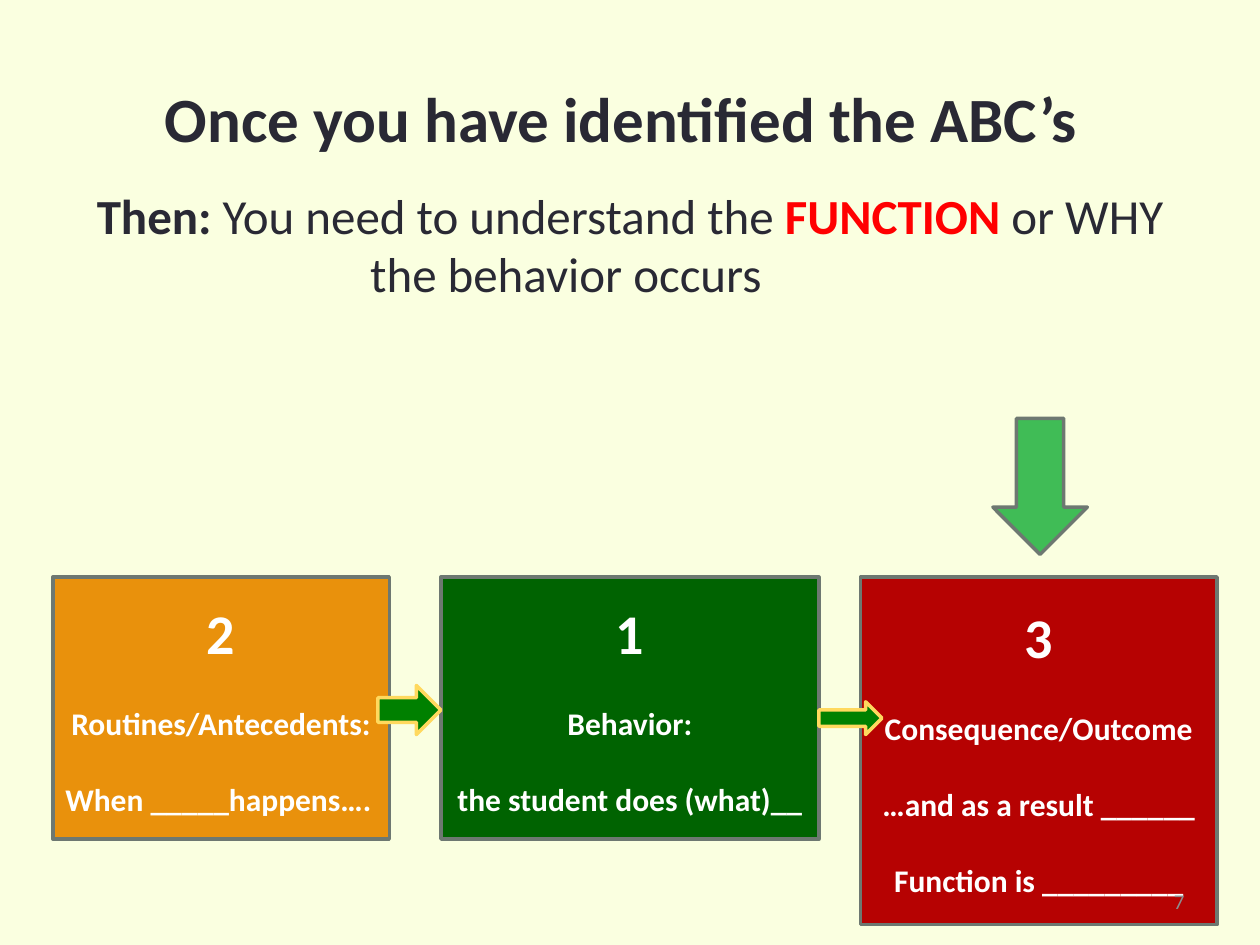
from dataclasses import dataclass

from pptx import Presentation
from pptx.dml.color import RGBColor
from pptx.enum.shapes import MSO_SHAPE
from pptx.enum.text import MSO_ANCHOR, PP_ALIGN
from pptx.util import Inches, Pt


@dataclass(frozen=True)
class Theme:
    """Colours, font and type sizes of the slide."""
    font: str = "Calibri"
    background: str = "FAFFE0"
    ink: str = "292934"
    emphasis: str = "FF0000"
    white: str = "FFFFFF"
    muted: str = "8D8D8F"
    outline: str = "6D7871"
    antecedent: str = "E9910C"
    behavior: str = "006301"
    consequence: str = "B60202"
    step_arrow: str = "008000"
    step_outline: str = "FFD95E"
    pointer: str = "40BC56"
    title_size: int = 36
    lead_size: int = 28
    number_size: int = 32
    label_size: int = 18
    page_size: int = 12


THEME = Theme()


def color(value):
    """Turn a hexadecimal string into a colour."""
    return RGBColor.from_string(value)


def set_font(font, size, ink, bold=None):
    """Set the theme font with a size, colour and weight."""
    font.name = THEME.font
    font.size = Pt(size)
    font.color.rgb = color(ink)
    font.bold = bold


def place(shape, left, top, width, height):
    """Move and size a shape in inches."""
    shape.left, shape.top = Inches(left), Inches(top)
    shape.width, shape.height = Inches(width), Inches(height)


def add_title(slide, text):
    """Fill and format the title placeholder."""
    title = slide.shapes.title
    place(title, 0.43, 0.54, 9, 0.78)
    title.text_frame.text = text
    title.text_frame.vertical_anchor = MSO_ANCHOR.MIDDLE
    paragraph = title.text_frame.paragraphs[0]
    paragraph.alignment = PP_ALIGN.CENTER
    set_font(paragraph.font, THEME.title_size, THEME.ink, True)


def add_text_box(slide, left, top, width, height):
    """Add a wrapping text box and return its text frame."""
    box = slide.shapes.add_textbox(*map(Inches, (left, top, width, height)))
    box.text_frame.word_wrap = True
    return box.text_frame


def add_lead(slide, pieces):
    """Add the lead sentence with an indented second line."""
    paragraph = add_text_box(slide, 0.5, 1.42, 9, 1.1).paragraphs[0]
    properties = paragraph._p.get_or_add_pPr()
    properties.set("marL", str(Inches(2.34)))
    properties.set("indent", str(Inches(-2.17)))
    for text, ink, bold in pieces:
        run = paragraph.add_run()
        run.text = text
        set_font(run.font, THEME.lead_size, ink, bold)


def add_figure(slide, kind, position, fill, outline):
    """Add a filled and outlined preset shape."""
    shape = slide.shapes.add_shape(kind, *map(Inches, position))
    shape.shadow.inherit = False
    shape.fill.solid()
    shape.fill.fore_color.rgb = color(fill)
    shape.line.color.rgb = color(outline)
    shape.line.width = Pt(2)
    return shape


def add_step(slide, position, fill, number, labels):
    """Add a step box with a large number above its labels."""
    box = add_figure(slide, MSO_SHAPE.RECTANGLE, position, fill, THEME.outline)
    frame = box.text_frame
    frame.word_wrap = True
    frame.vertical_anchor = MSO_ANCHOR.MIDDLE
    frame.text = "\n".join([number, *labels])
    for index, paragraph in enumerate(frame.paragraphs):
        paragraph.alignment = PP_ALIGN.CENTER
        paragraph.space_before = Pt(22 if index else 0)
        size = THEME.label_size if index else THEME.number_size
        set_font(paragraph.font, size, THEME.white, True)
    return box


def add_page_number(slide, text):
    """Add the page number at the lower right."""
    frame = add_text_box(slide, 7.17, 6.95, 2.33, 0.4)
    frame.vertical_anchor = MSO_ANCHOR.MIDDLE
    frame.text = text
    paragraph = frame.paragraphs[0]
    paragraph.alignment = PP_ALIGN.RIGHT
    set_font(paragraph.font, THEME.page_size, THEME.muted)


def main():
    """Build and save the slide."""
    presentation = Presentation()
    presentation.slide_width, presentation.slide_height = Inches(10), Inches(7.5)
    slide = presentation.slides.add_slide(presentation.slide_layouts[5])
    slide.background.fill.solid()
    slide.background.fill.fore_color.rgb = color(THEME.background)

    add_title(slide, "Once you have identified the ABC’s")
    add_lead(slide, [
        ("Then:", THEME.ink, True),
        (" You need to understand the ", THEME.ink, False),
        ("FUNCTION", THEME.emphasis, True),
        (" or WHY the behavior occurs", THEME.ink, False),
    ])

    antecedent = add_step(slide, (0.42, 4.58, 2.67, 2.08), THEME.antecedent, "2",
                          ["Routines/Antecedents:", "When _____happens…."])
    antecedent.text_frame.paragraphs[-1].alignment = PP_ALIGN.LEFT
    add_step(slide, (3.5, 4.58, 3, 2.08), THEME.behavior, "1",
             ["Behavior:", "the student does (what)__"])
    add_step(slide, (6.83, 4.58, 2.83, 2.76), THEME.consequence, "3",
             ["Consequence/Outcome", "…and as a result ______", "Function is _________"])

    for position in ((3, 5.44, 0.5, 0.39), (6.5, 5.57, 0.5, 0.26)):
        add_figure(slide, MSO_SHAPE.RIGHT_ARROW, position,
                   THEME.step_arrow, THEME.step_outline)
    add_figure(slide, MSO_SHAPE.DOWN_ARROW, (7.88, 3.32, 0.75, 1.08),
               THEME.pointer, THEME.outline)
    add_page_number(slide, "7")
    presentation.save("out.pptx")


if __name__ == "__main__":
    main()
